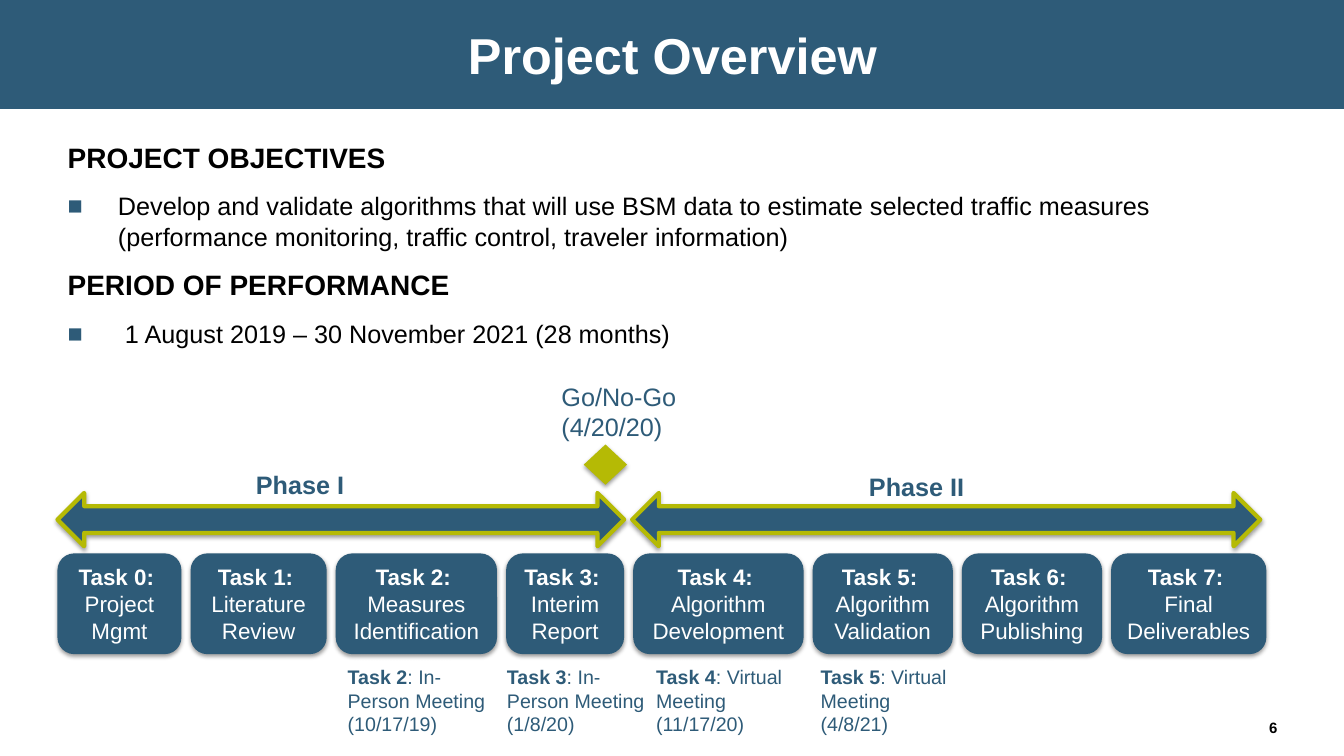
import lxml.etree
import pptx
import pptx.dml.color
import pptx.enum.shapes
import pptx.enum.text
import pptx.oxml.ns
import pptx.util

Inches, Pt = pptx.util.Inches, pptx.util.Pt
KIND = pptx.enum.shapes.MSO_SHAPE
ALIGN = pptx.enum.text.PP_ALIGN
ANCHOR = pptx.enum.text.MSO_ANCHOR
FIT = pptx.enum.text.MSO_AUTO_SIZE

COLORS = {"blue": "2E5B78", "lime": "B5BA05", "white": "FFFFFF", "black": "000000"}
GAP = 0.09
OBJECTIVES = [
    ("PROJECT OBJECTIVES",
     "Develop and validate algorithms that will use BSM data to estimate selected "
     "traffic measures (performance monitoring, traffic control, traveler information)"),
    ("PERIOD OF PERFORMANCE", " 1 August 2019 – 30 November 2021 (28 months)"),
]
TASKS = [
    ("Project Mgmt", 1.23), ("Literature Review", 1.35),
    ("Measures Identification", 1.6), ("Interim Report", 1.17),
    ("Algorithm Development", 1.69), ("Algorithm Validation", 1.39),
    ("Algorithm Publishing", 1.39), ("Final Deliverables", 1.54),
]
PHASES = [
    ("Phase I", 0.57, 5.62, (2.44, 4.61, 1.09, 0.4)),
    ("Phase II", 6.27, 6.23, (8.52, 4.63, 1.25, 0.4)),
]
MEETINGS = [
    ("Task 2", ": In-Person Meeting (10/17/19)", 3.35, 1.57),
    ("Task 3", ": In-Person Meeting (1/8/20)", 4.93, 1.57),
    ("Task 4", ": Virtual Meeting (11/17/20)", 6.41, 1.76),
    ("Task 5", ": Virtual Meeting (4/8/21)", 8.04, 1.49),
]


def color(name):
    return pptx.dml.color.RGBColor.from_string(COLORS[name])


def node(parent, tag, **attrs):
    return lxml.etree.SubElement(parent, pptx.oxml.ns.qn(tag), attrs)


def style(part, size, tint, bold=None):
    """Format the font of a paragraph or run."""
    font = part.font
    font.name, font.size, font.bold = "Arial", Pt(size), bold
    font.color.rgb = color(tint)


def place(shape, box):
    shape.left, shape.top, shape.width, shape.height = map(Inches, box)


def draw(slide, kind, box, fill, shade=True):
    shape = slide.shapes.add_shape(kind, *map(Inches, box))
    shape.fill.solid()
    shape.fill.fore_color.rgb = color(fill)
    shape.line.fill.background()
    shape.shadow.inherit = False
    if shade:
        effects = shape.element.spPr.find(pptx.oxml.ns.qn("a:effectLst"))
        outer = node(effects, "a:outerShdw", blurRad=str(Pt(3.1)), dist=str(Pt(1.6)),
                     dir="5400000", rotWithShape="0")
        node(node(outer, "a:srgbClr", val=COLORS["black"]), "a:alpha", val="38000")
    return shape


def label(slide, box, text, size, tint="blue", bold=None):
    shape = slide.shapes.add_textbox(*map(Inches, box))
    frame = shape.text_frame
    frame.word_wrap = True
    frame.auto_size = FIT.SHAPE_TO_FIT_TEXT
    frame.text = text
    for para in frame.paragraphs:
        style(para, size, tint, bold)
    return frame


def header(slide, box):
    left, top, width, height = box
    title = slide.shapes.title
    band = draw(slide, KIND.RECTANGLE, box, "blue", shade=False)
    title.element.addprevious(band.element)
    place(title, (left + 0.67, top, width - 1.33, height))
    frame = title.text_frame
    frame.text = "Project Overview"
    frame.auto_size = FIT.NONE
    frame.vertical_anchor = ANCHOR.MIDDLE
    para = frame.paragraphs[0]
    para.alignment = ALIGN.CENTER
    style(para, 36, "white", True)


def bullet(para, mark):
    """Give a paragraph a square bullet, or none."""
    props = para._p.get_or_add_pPr()
    props.set("marL", str(Inches(0.5 if mark else 0)))
    props.set("indent", str(Inches(-0.5 if mark else 0)))
    if mark:
        node(node(props, "a:buClr"), "a:srgbClr", val=COLORS["blue"])
        node(props, "a:buFont", typeface="Arial")
        node(props, "a:buChar", char="■")
    else:
        node(props, "a:buNone")


def goals(slide, box):
    body = slide.placeholders[1]
    place(body, box)
    frame = body.text_frame
    frame.text = "\n".join(line for pair in OBJECTIVES for line in pair)
    frame.auto_size = FIT.NONE
    for index, para in enumerate(frame.paragraphs):
        item = index % 2 == 1
        para.space_before = para.space_after = Pt(6)
        bullet(para, item)
        style(para, 18 if item else 20, "black", not item)


def tasks(slide, box):
    left, top, height = box
    for index, (name, width) in enumerate(TASKS):
        shape = draw(slide, KIND.ROUNDED_RECTANGLE, (left, top, width, height), "blue")
        frame = shape.text_frame
        frame.text = f"Task {index}: \n{name}"
        frame.vertical_anchor = ANCHOR.MIDDLE
        for para, bold in zip(frame.paragraphs, (True, False)):
            para.alignment = ALIGN.CENTER
            style(para, 16, "white", bold)
        left += width + GAP


def phases(slide, top):
    for name, left, width, box in PHASES:
        arrow = draw(slide, KIND.LEFT_RIGHT_ARROW, (left, top, width, 0.53), "blue")
        arrow.line.color.rgb = color("lime")
        arrow.line.width = Pt(3)
        label(slide, box, name, 18, bold=True)


def gate(slide, box):
    left, top, width, height = box
    draw(slide, KIND.DIAMOND, (left + 0.32, top + 0.68, 0.43, 0.4), "lime")
    label(slide, box, "Go/No-Go\n(4/20/20)", 18)


def meetings(slide, top):
    for task, detail, left, width in MEETINGS:
        frame = label(slide, (left, top, width, 0.81), task, 14)
        para = frame.paragraphs[0]
        para.runs[0].font.bold = True
        para.add_run().text = detail


def number(slide, box):
    frame = label(slide, box, "6", 10.7, "black", True)
    frame.paragraphs[0].alignment = ALIGN.CENTER


def main():
    deck = pptx.Presentation()
    deck.slide_width, deck.slide_height = Inches(13.33), Inches(7.5)
    slide = deck.slides.add_slide(deck.slide_layouts[1])
    header(slide, (0, 0, 13.33, 1.08))
    goals(slide, (0.57, 1.34, 12.1, 3.11))
    tasks(slide, (0.57, 5.49, 1))
    phases(slide, 4.89)
    gate(slide, (5.47, 3.73, 1.42, 0.71))
    meetings(slide, 6.55)
    number(slide, (11.86, 7.08, 1.54, 0.28))
    deck.save("out.pptx")


if __name__ == "__main__":
    main()
